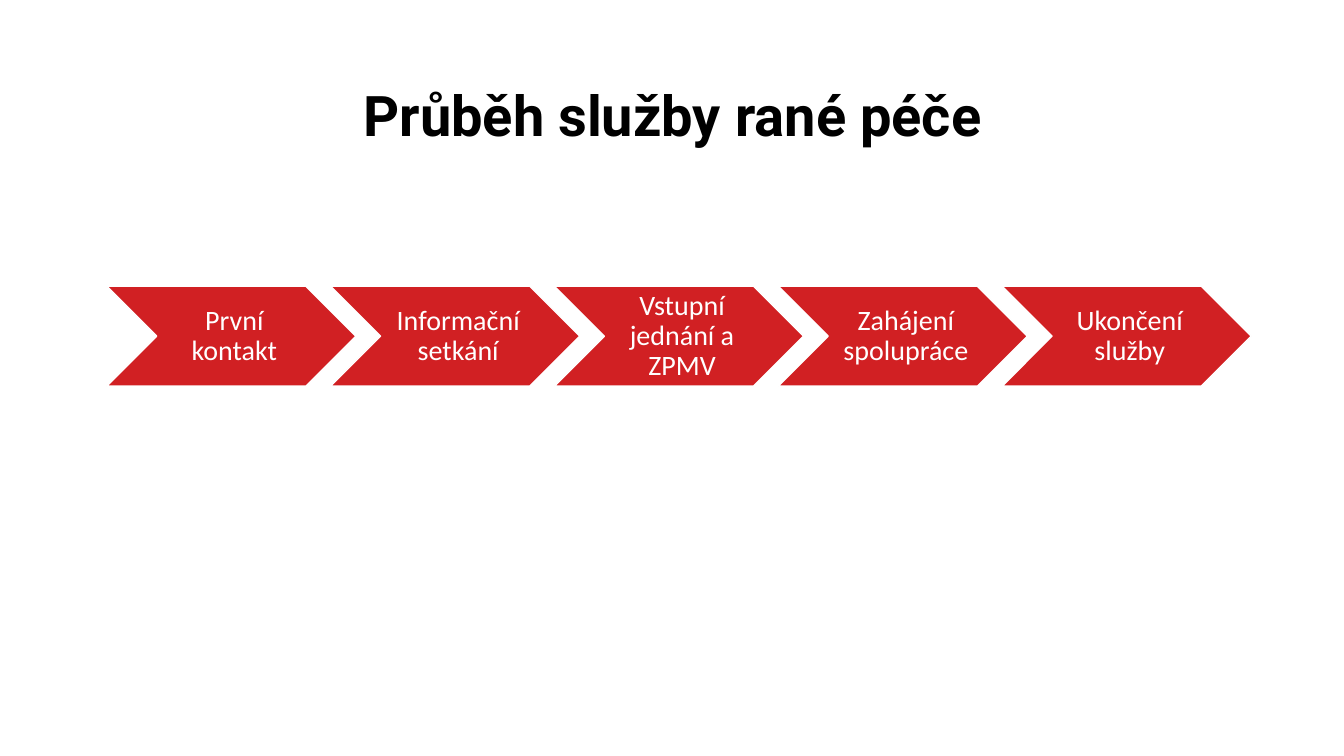
import pptx
import pptx.dml.color
import pptx.enum.shapes
import pptx.enum.text
import pptx.util
from pptx.util import Inches

# Content
TITLE = "Průběh služby rané péče"
STEPS = [
    "První kontakt",
    "Informační setkání",
    "Vstupní jednání a ZPMV",
    "Zahájení spolupráce",
    "Ukončení služby",
]

# Layout in inches
STEP_LEFT, STEP_TOP, STEP_W, STEP_H = 1.06, 2.84, 2.47, 0.99
STEP_PITCH = 2.22
RED, WHITE, BLACK = "D12023", "FFFFFF", "000000"


def color(value):
    return pptx.dml.color.RGBColor.from_string(value)


def set_text(shape, text, font, size, ink, anchor, insets, bold=False):
    tf = shape.text_frame
    tf.word_wrap = True
    tf.vertical_anchor = anchor
    tf.margin_left, tf.margin_top, tf.margin_right, tf.margin_bottom = map(Inches, insets)
    p = tf.paragraphs[0]
    p.text = text
    p.alignment = pptx.enum.text.PP_ALIGN.CENTER
    p.line_spacing = 0.9
    p.font.name = font
    p.font.size = pptx.util.Pt(size)
    p.font.bold = bold
    p.font.color.rgb = color(ink)


prs = pptx.Presentation()
prs.slide_width, prs.slide_height = Inches(13.33), Inches(7.5)
s = prs.slides.add_slide(prs.slide_layouts[6])

# Title
title = s.shapes.add_textbox(Inches(0.92), Inches(0.68), Inches(11.5), Inches(0.84))
set_text(title, TITLE, "Roboto", 40, BLACK, pptx.enum.text.MSO_ANCHOR.BOTTOM,
         (0.1, 0.05, 0.1, 0.05), bold=True)

# Process chevrons
for i, step in enumerate(STEPS):
    sp = s.shapes.add_shape(
        pptx.enum.shapes.MSO_SHAPE.CHEVRON,
        Inches(STEP_LEFT + i * STEP_PITCH), Inches(STEP_TOP),
        Inches(STEP_W), Inches(STEP_H))
    sp.shadow.inherit = False
    sp.fill.solid()
    sp.fill.fore_color.rgb = color(RED)
    sp.line.color.rgb = color(WHITE)
    sp.line.width = pptx.util.Pt(1)
    set_text(sp, step, "Calibri", 20, WHITE, pptx.enum.text.MSO_ANCHOR.MIDDLE,
             (0.09, 0.03, 0.03, 0.03))

prs.save("out.pptx")
